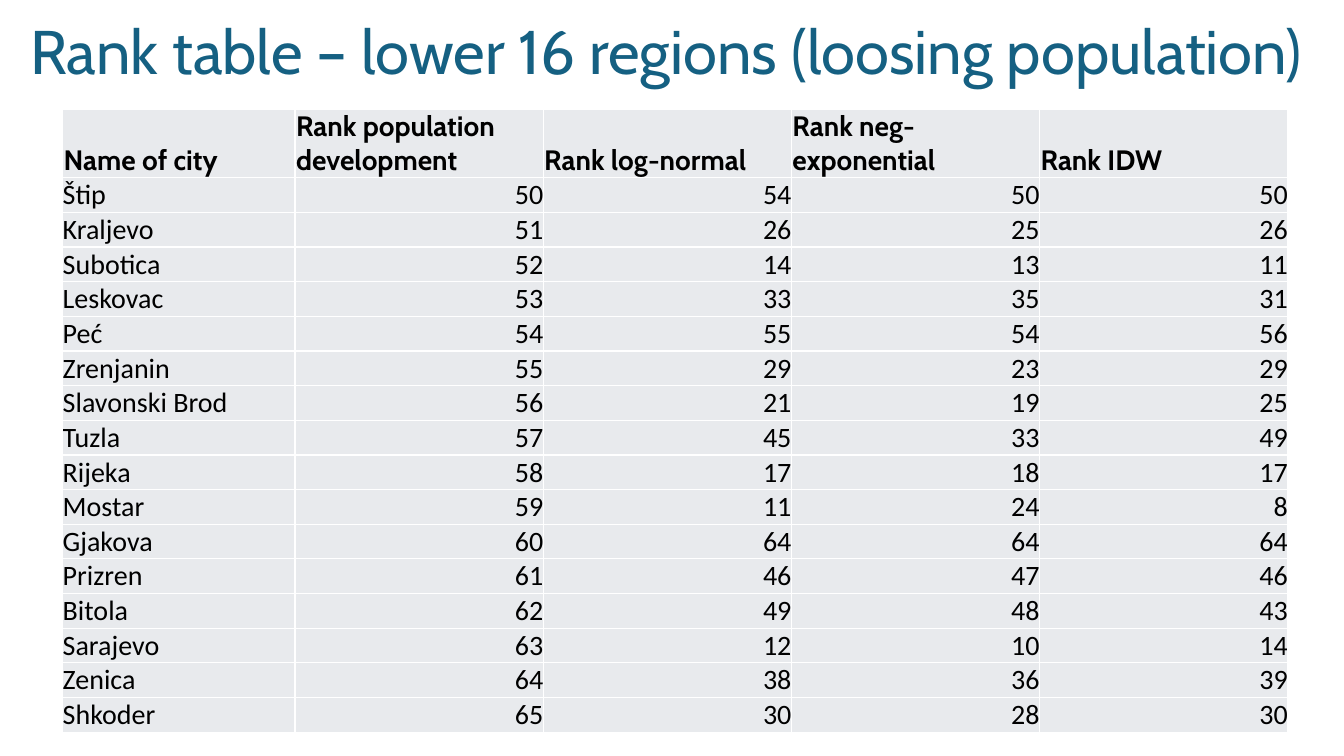
"""Build a slide with a rank table of the 16 regions that lose population."""
from dataclasses import dataclass

from lxml.etree import SubElement
from pptx import Presentation
from pptx.dml.color import RGBColor
from pptx.enum.text import MSO_ANCHOR, PP_ALIGN
from pptx.oxml.ns import qn
from pptx.util import Pt

TITLE = "Rank table – lower 16 regions (loosing population)"
HEADINGS = ("Name of city", "Rank population development", "Rank log-normal",
            "Rank neg-exponential", "Rank IDW")
CITIES = [
    ("Štip", 50, 54, 50, 50),
    ("Kraljevo", 51, 26, 25, 26),
    ("Subotica", 52, 14, 13, 11),
    ("Leskovac", 53, 33, 35, 31),
    ("Peć", 54, 55, 54, 56),
    ("Zrenjanin", 55, 29, 23, 29),
    ("Slavonski Brod", 56, 21, 19, 25),
    ("Tuzla", 57, 45, 33, 49),
    ("Rijeka", 58, 17, 18, 17),
    ("Mostar", 59, 11, 24, 8),
    ("Gjakova", 60, 64, 64, 64),
    ("Prizren", 61, 46, 47, 46),
    ("Bitola", 62, 49, 48, 43),
    ("Sarajevo", 63, 12, 10, 14),
    ("Zenica", 64, 38, 36, 39),
    ("Shkoder", 65, 30, 28, 30),
]


@dataclass(frozen=True)
class Theme:
    """Colours, fonts and type sizes of the slide."""
    title: str = "156082"
    ink: str = "000000"
    cell: str = "E8EAED"
    rule: str = "FFFFFF"
    heading_font: str = "Cabin"
    body_font: str = "Calibri"
    title_size: float = 44
    table_size: float = 20


THEME = Theme()
SLIDE_SIZE = (960, 540)
TITLE_BOX = (14.4, 0, 930.2, 77.8)
TABLE_LEFT, TABLE_TOP = 44.8, 77.8
CITY_WIDTH, RANK_WIDTH = 166, 177.3
HEADING_HEIGHT, CITY_HEIGHT = 49.2, 24.75
HEADING_INSET = 0.7


def add_text(paragraph, text, font_name, size, colour, bold=False):
    """Add one styled run to a paragraph."""
    run = paragraph.add_run()
    run.text = text
    run.font.name = font_name
    run.font.size = Pt(size)
    run.font.bold = bold
    run.font.color.rgb = RGBColor.from_string(colour)


def add_rules(cell):
    """Draw a thin line on all four sides of a cell."""
    properties = cell._tc.get_or_add_tcPr()
    for side in ("a:lnL", "a:lnR", "a:lnT", "a:lnB"):
        line = SubElement(properties, qn(side), w=str(Pt(1)))
        SubElement(SubElement(line, qn("a:solidFill")), qn("a:srgbClr"), val=THEME.rule)


def add_title(slide):
    """Place the slide title."""
    frame = slide.shapes.add_textbox(*map(Pt, TITLE_BOX)).text_frame
    frame.word_wrap = True
    frame.vertical_anchor = MSO_ANCHOR.MIDDLE
    frame.paragraphs[0].line_spacing = 0.9
    add_text(frame.paragraphs[0], TITLE, THEME.heading_font, THEME.title_size, THEME.title)


def fill_cell(cell, value, is_heading):
    """Style a cell and write its value, with ranks to the right."""
    add_rules(cell)
    cell.fill.solid()
    cell.fill.fore_color.rgb = RGBColor.from_string(THEME.cell)
    cell.vertical_anchor = MSO_ANCHOR.BOTTOM
    cell.margin_left = cell.margin_right = Pt(HEADING_INSET if is_heading else 0)
    cell.margin_top = cell.margin_bottom = Pt(0)
    paragraph = cell.text_frame.paragraphs[0]
    paragraph.alignment = PP_ALIGN.RIGHT if isinstance(value, int) else PP_ALIGN.LEFT
    font_name = THEME.heading_font if is_heading else THEME.body_font
    add_text(paragraph, str(value), font_name, THEME.table_size, THEME.ink, is_heading)


def add_rank_table(slide):
    """Place the table of city ranks."""
    rows = [HEADINGS, *CITIES]
    widths = [CITY_WIDTH] + [RANK_WIDTH] * (len(HEADINGS) - 1)
    heights = [HEADING_HEIGHT] + [CITY_HEIGHT] * len(CITIES)
    bounds = (TABLE_LEFT, TABLE_TOP, sum(widths), sum(heights))
    table = slide.shapes.add_table(len(rows), len(widths), *map(Pt, bounds)).table
    table.first_row = table.horz_banding = False
    for column, width in zip(table.columns, widths):
        column.width = Pt(width)
    for row_index, (row, height) in enumerate(zip(rows, heights)):
        table.rows[row_index].height = Pt(height)
        for column_index, value in enumerate(row):
            fill_cell(table.cell(row_index, column_index), value, row_index == 0)


def main():
    """Build and save the slide."""
    presentation = Presentation()
    presentation.slide_width, presentation.slide_height = map(Pt, SLIDE_SIZE)
    slide = presentation.slides.add_slide(presentation.slide_layouts[6])
    add_title(slide)
    add_rank_table(slide)
    presentation.save("out.pptx")


if __name__ == "__main__":
    main()
